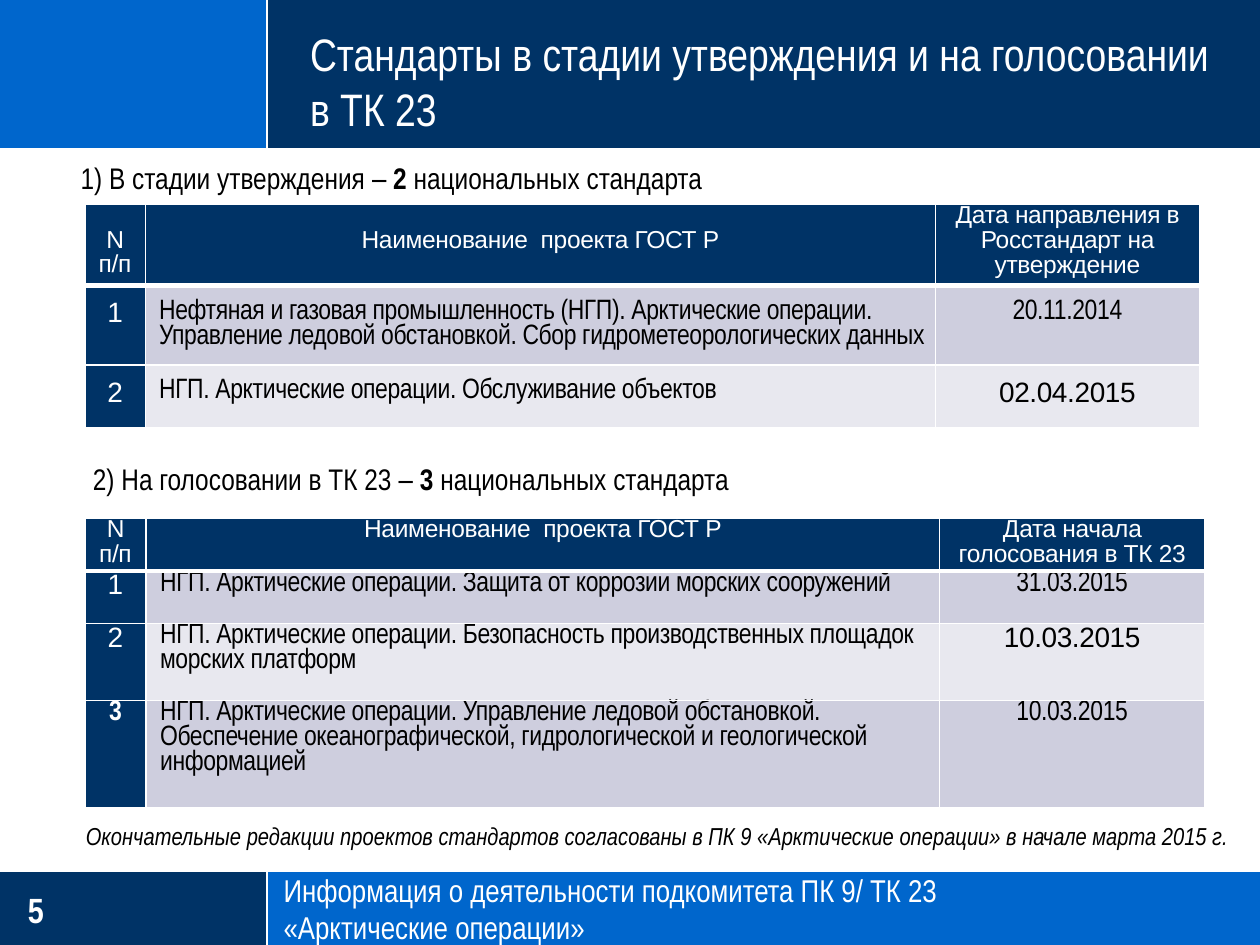
from typing import NamedTuple

from lxml.etree import SubElement
from pptx import Presentation
from pptx.dml.color import RGBColor
from pptx.enum.shapes import MSO_CONNECTOR, MSO_SHAPE
from pptx.enum.text import MSO_ANCHOR, PP_ALIGN
from pptx.oxml.ns import qn
from pptx.util import Pt

NAVY = RGBColor(0x00, 0x33, 0x66)
BLUE = RGBColor(0x00, 0x66, 0xCC)
WHITE = RGBColor(0xFF, 0xFF, 0xFF)
BLACK = RGBColor(0x00, 0x00, 0x00)
LILAC = RGBColor(0xCE, 0xCE, 0xDE)
PALE = RGBColor(0xE8, 0xE8, 0xEF)
WIDE = "Arial"
SLIM = "Arial Narrow"


class Box(NamedTuple):
    left: float
    top: float
    width: float
    height: float

    def points(self) -> tuple:
        return tuple(Pt(size) for size in self)


class Run(NamedTuple):
    text: str
    size: float
    color: RGBColor = BLACK
    font: str = SLIM
    bold: bool = False
    slant: bool = False
    space: int = 0


class Cell(NamedTuple):
    run: Run
    fill: RGBColor
    pad: float = 0
    lines: float = 0.95
    left: bool = False
    edge: float = 1


class Grid(NamedTuple):
    box: Box
    cols: list
    rows: list
    cells: list


def add_run(para, run: Run) -> None:
    item = para.add_run()
    item.text = run.text
    font = item.font
    font.size, font.name = Pt(run.size), run.font
    font.bold, font.italic = run.bold, run.slant
    font.color.rgb = run.color
    if run.space:
        item._r.get_or_add_rPr().set("spc", str(run.space))


def add_block(slide, box: Box, color: RGBColor) -> None:
    shape = slide.shapes.add_shape(MSO_SHAPE.RECTANGLE, *box.points())
    shape.shadow.inherit = False
    shape.fill.solid()
    shape.fill.fore_color.rgb = color
    shape.line.fill.background()


def add_rule(slide, *ends: float) -> None:
    rule = slide.shapes.add_connector(MSO_CONNECTOR.STRAIGHT, *map(Pt, ends))
    rule.line.color.rgb = WHITE
    rule.line.width = Pt(1.25)
    SubElement(rule._element.spPr, qn("a:effectLst"))


def fill_frame(frame, paras: list, pad: tuple = (7.2, 3.6)) -> None:
    frame.word_wrap = True
    frame.margin_left = frame.margin_right = Pt(pad[0])
    frame.margin_top = frame.margin_bottom = Pt(pad[1])
    for spot, runs in enumerate(paras):
        para = frame.add_paragraph() if spot else frame.paragraphs[0]
        for run in runs:
            add_run(para, run)


def add_text(slide, box: Box, paras: list, pad: tuple = (7.2, 3.6)):
    frame = slide.shapes.add_textbox(*box.points()).text_frame
    fill_frame(frame, paras, pad)
    return frame


def add_edges(cell, base: float) -> None:
    props = cell._tc.get_or_add_tcPr()
    for spot, side in enumerate(("lnL", "lnR", "lnT", "lnB")):
        width = base if side == "lnB" else 1
        line = SubElement(props, qn(f"a:{side}"), w=str(Pt(width)))
        props.remove(line)
        props.insert(spot, line)
        solid = SubElement(line, qn("a:solidFill"))
        SubElement(solid, qn("a:srgbClr"), val=str(WHITE))


def fill_cell(cell, part: Cell) -> None:
    cell.margin_left = cell.margin_right = Pt(2)
    cell.margin_top, cell.margin_bottom = Pt(part.pad), 0
    cell.fill.solid()
    cell.fill.fore_color.rgb = part.fill
    add_edges(cell, part.edge)
    para = cell.text_frame.paragraphs[0]
    para.line_spacing = part.lines
    if part.left:
        para._p.get_or_add_pPr().set("marL", str(Pt(6)))
    else:
        para.alignment = PP_ALIGN.CENTER
    add_run(para, part.run)


def add_grid(slide, grid: Grid) -> None:
    size = len(grid.rows), len(grid.cols)
    table = slide.shapes.add_table(*size, *grid.box.points()).table
    table.first_row = table.horz_banding = False
    for col, width in zip(table.columns, grid.cols):
        col.width = Pt(width)
    for row, height, parts in zip(table.rows, grid.rows, grid.cells):
        row.height = Pt(height)
        for cell, part in zip(row.cells, parts):
            fill_cell(cell, part)


def head_row(date: str, pad: float) -> list:
    texts = ("N п/п", pad), ("Наименование  проекта ГОСТ Р", pad), (date, 0)
    return [Cell(Run(text, 14, WHITE, WIDE, space=-20), NAVY, top, 0.9, edge=3)
            for text, top in texts]


def body_row(mark: str, name: str, date: str, pad: float) -> list:
    fill = LILAC if int(mark) % 2 else PALE
    bold = mark == "3"
    return [
        Cell(Run(mark, 16, WHITE, SLIM if bold else WIDE, bold, space=-20), NAVY, pad),
        Cell(Run(name, 16, space=-20), fill, pad, left=True),
        Cell(Run(date, 16, font=WIDE if mark == "2" else SLIM, space=-20), fill, pad),
    ]


def add_lead(slide, box: Box, start: str, count: str) -> None:
    add_text(slide, box, [[
        Run(start, 17), Run("–", 18), Run(" ", 17),
        Run(count, 17, bold=True), Run(" национальных стандарта", 17),
    ]])


def main() -> None:
    deck = Presentation()
    deck.slide_width, deck.slide_height = Pt(720), Pt(540)
    slide = deck.slides.add_slide(deck.slide_layouts[5])
    split, top, base = 152.5, 85, 497.5
    for y, height, near, far in ((base, 42.5, NAVY, BLUE), (0, top, BLUE, NAVY)):
        add_block(slide, Box(0, y, split, height), near)
        add_block(slide, Box(split, y, 720 - split, height), far)
        add_rule(slide, split, y, split, y + height)
    for y in (base, top):
        add_rule(slide, 0, y, 720, y)

    title = slide.shapes.title
    title.left, title.top, title.width, title.height = Box(170, 11.5, 550, 62).points()
    slide.shapes._spTree.append(title._element)
    frame = title.text_frame
    frame.vertical_anchor = MSO_ANCHOR.TOP
    para = frame.paragraphs[0]
    para.alignment = PP_ALIGN.LEFT
    fill_frame(frame, [[Run("Стандарты в стадии утверждения и на голосовании ", 26, WHITE)]])
    para.add_line_break()
    add_run(para, Run("в ТК 23", 26, WHITE))

    page = add_text(slide, Box(16, 501, 117, 37.5), [[Run("5", 20, WHITE, bold=True)]], (0, 0))
    page.vertical_anchor = MSO_ANCHOR.MIDDLE
    add_lead(slide, Box(39, 87, 432, 29), "1) В стадии утверждения ", "2")
    add_grid(slide, Grid(Box(48.5, 116.5, 637, 128), [34.5, 451.5, 151], [46.5, 45.5, 36], [
        head_row("Дата направления в Росстандарт на утверждение", 14),
        body_row("1", "Нефтяная и газовая промышленность (НГП). Арктические операции. "
                 "Управление ледовой обстановкой. Сбор гидрометеорологических данных",
                 "20.11.2014", 8),
        body_row("2", "НГП. Арктические операции. Обслуживание объектов", "02.04.2015", 8),
    ]))
    add_lead(slide, Box(46, 259, 669, 29), "2) На голосовании в ТК 23 ", "3")
    add_grid(slide, Grid(Box(48.5, 296, 640, 165.5), [35, 453.5, 151.5], [30, 30, 44, 61.5], [
        head_row("Дата начала голосования в ТК 23", 0),
        body_row("1", "НГП. Арктические операции. Защита от коррозии морских сооружений",
                 "31.03.2015", 0),
        body_row("2", "НГП. Арктические операции. Безопасность производственных площадок "
                 "морских платформ", "10.03.2015", 0),
        body_row("3", "НГП. Арктические операции. Управление ледовой обстановкой. Обеспечение "
                 "океанографической, гидрологической и геологической информацией",
                 "10.03.2015", 0),
    ]))
    note = add_text(slide, Box(46, 463, 669, 39.5), [[Run(
        "Окончательные редакции проектов стандартов согласованы в ПК 9 "
        "«Арктические операции» в начале марта 2015 г.", 14, slant=True)]], (3, 3.6))
    note.paragraphs[0].line_spacing = 1.14
    add_text(slide, Box(155, 494, 565, 37.5), [
        [Run("Информация о деятельности подкомитета ПК 9/ ТК 23", 18, WHITE)],
        [Run("«Арктические операции»", 18, WHITE)],
    ])
    deck.save("out.pptx")


if __name__ == "__main__":
    main()
